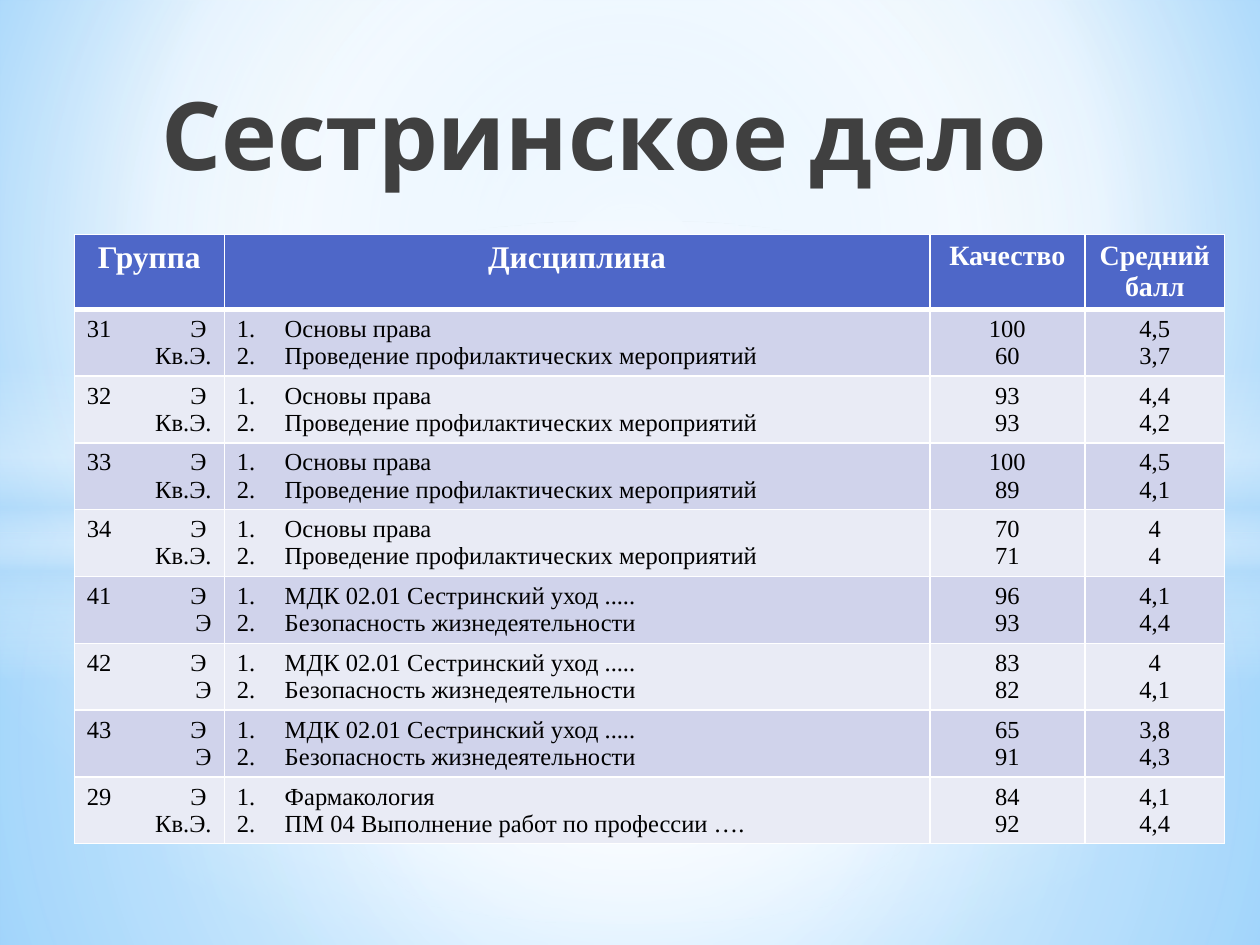
"""Builds the slide with exam results of the nursing groups."""
from lxml import etree
from pptx import Presentation
from pptx.dml.color import RGBColor
from pptx.enum.shapes import MSO_SHAPE
from pptx.enum.text import MSO_ANCHOR, PP_ALIGN
from pptx.oxml import parse_xml
from pptx.oxml.ns import nsdecls, qn
from pptx.util import Inches, Pt

LEFT, CENTER, RIGHT = PP_ALIGN.LEFT, PP_ALIGN.CENTER, PP_ALIGN.RIGHT
TOP = MSO_ANCHOR.TOP
RECTANGLE, OVAL = MSO_SHAPE.RECTANGLE, MSO_SHAPE.OVAL

COLORS = {
    "white": "FFFFFF", "sky": "9ED5FF", "azure": "5BB9FF", "haze": "B4DCFA",
    "title": "404040", "text": "000000", "header": "4E67C8",
    "odd": "D0D3EB", "even": "E9EBF5",
}
TITLE = "Сестринское дело"
TITLE_FONT, TABLE_FONT = "Cabin", "Times New Roman"
HEADERS = [(["Группа"], 18), (["Дисциплина"], 18), (["Качество"], 16),
           (["Средний", "балл"], 16)]
PREVENTION = ["Основы права", "Проведение профилактических мероприятий"]
CARE = ["МДК 02.01 Сестринский уход .....", "Безопасность жизнедеятельности"]
PHARMACY = ["Фармакология", "ПМ 04 Выполнение работ по профессии …."]
GROUPS = [
    ("31", "Кв.Э.", PREVENTION, ["100", "60"], ["4,5", "3,7"]),
    ("32", "Кв.Э.", PREVENTION, ["93", "93"], ["4,4", "4,2"]),
    ("33", "Кв.Э.", PREVENTION, ["100", "89"], ["4,5", "4,1"]),
    ("34", "Кв.Э.", PREVENTION, ["70", "71"], ["4", "4"]),
    ("41", "Э", CARE, ["96", "93"], ["4,1", "4,4"]),
    ("42", "Э", CARE, ["83", "82"], ["4", "4,1"]),
    ("43", "Э", CARE, ["65", "91"], ["3,8", "4,3"]),
    ("29", "Кв.Э.", PHARMACY, ["84", "92"], ["4,1", "4,4"]),
]
COLUMN_WIDTHS = [1.19, 5.6, 1.23, 1.11]
HEADER_HEIGHT, ROW_HEIGHT = 0.58, 0.53

MIDDLE = (50, 50, 50, 50)
BACKGROUND = [(0, "sky", 100), (60, "white", 100), (100, "azure", 100)]
GLOWS = [
    (RECTANGLE, (0, 4.23, 10, 3.27), MIDDLE,
     [(0, "white", 91), (37, "white", 76), (100, "haze", 79)]),
    (RECTANGLE, (0, 0, 10, 4.23), MIDDLE,
     [(0, "white", 89), (48, "white", 62), (100, "haze", 79)]),
    (RECTANGLE, (0, 2.9, 10, 2.5), None,
     [(0, "white", 0), (29, "white", 30), (45, "haze", 40),
      (55, "white", 26), (65, "haze", 60), (100, "white", 0)]),
    (OVAL, (0, 1.75, 10, 5.58), MIDDLE,
     [(0, "white", 100), (54, "white", 0)]),
]


def color(name):
    return RGBColor.from_string(COLORS[name])


def set_gradient(fill, owner, stops, focus):
    fill.gradient()
    stop_xml = "".join(
        f'<a:gs pos="{place * 1000}"><a:srgbClr val="{COLORS[name]}">'
        f'<a:alpha val="{opacity * 1000}"/></a:srgbClr></a:gs>'
        for place, name, opacity in stops)
    if focus:
        sides = " ".join(f'{side}="{value * 1000}"' for side, value in zip("ltrb", focus))
        shade = f'<a:path path="circle"><a:fillToRect {sides}/></a:path>'
    else:
        shade = '<a:lin ang="5400000" scaled="0"/>'
    old = owner.find(".//" + qn("a:gradFill"))
    old.getparent().replace(old, parse_xml(
        f'<a:gradFill {nsdecls("a")} rotWithShape="1">'
        f'<a:gsLst>{stop_xml}</a:gsLst>{shade}</a:gradFill>'))


def add_text(para, text, font, size, name, bold=False):
    span = para.add_run()
    span.text = text
    span.font.name, span.font.size, span.font.bold = font, Pt(size), bold
    span.font.color.rgb = color(name)


def style_cell(cell, fill, bottom=1):
    props = cell._tc.get_or_add_tcPr()
    for side, width in (("L", 1), ("R", 1), ("T", 1), ("B", bottom)):
        props.append(parse_xml(
            f'<a:ln{side} {nsdecls("a")} w="{Pt(width)}"><a:solidFill>'
            f'<a:srgbClr val="{COLORS["white"]}"/></a:solidFill></a:ln{side}>'))
    cell.fill.solid()
    cell.fill.fore_color.rgb = color(fill)


def fill_cell(cell, lines, aligns, size=14, name="text", bold=False):
    for index, (line, align) in enumerate(zip(lines, aligns)):
        frame = cell.text_frame
        para = frame.add_paragraph() if index else frame.paragraphs[0]
        para.alignment = align
        add_text(para, line, TABLE_FONT, size, name, bold)


def number_lines(cell):
    for para in cell.text_frame.paragraphs:
        props = para._p.get_or_add_pPr()
        props.set("marL", str(Inches(0.38)))
        props.set("indent", str(Inches(-0.38)))
        etree.SubElement(props, qn("a:buFont"), typeface="+mj-lt")
        etree.SubElement(props, qn("a:buAutoNum"), type="arabicPeriod")


def add_right_tab(para, place):
    tabs = etree.SubElement(para._p.get_or_add_pPr(), qn("a:tabLst"))
    etree.SubElement(tabs, qn("a:tab"), pos=str(Inches(place)), algn="r")


def add_results(slide):
    height = HEADER_HEIGHT + ROW_HEIGHT * len(GROUPS)
    table = slide.shapes.add_table(
        len(GROUPS) + 1, len(HEADERS), Inches(0.59), Inches(1.86),
        Inches(sum(COLUMN_WIDTHS)), Inches(height)).table
    for column, width in zip(table.columns, COLUMN_WIDTHS):
        column.width = Inches(width)
    for index, row in enumerate(table.rows):
        row.height = Inches(ROW_HEIGHT if index else HEADER_HEIGHT)
    for cell, (lines, size) in zip(table.rows[0].cells, HEADERS):
        style_cell(cell, "header", 3)
        fill_cell(cell, lines, [CENTER] * 2, size, "white", True)
    for index, (group, exam, subjects, quality, average) in enumerate(GROUPS, 1):
        cells = list(table.rows[index].cells)
        for cell in cells:
            style_cell(cell, "odd" if index % 2 else "even")
        fill_cell(cells[0], [f"{group}\tЭ", exam], [LEFT, RIGHT])
        add_right_tab(cells[0].text_frame.paragraphs[0], 0.95)
        fill_cell(cells[1], subjects, [LEFT] * 2)
        number_lines(cells[1])
        fill_cell(cells[2], quality, [CENTER] * 2)
        fill_cell(cells[3], average, [CENTER] * 2)


def main():
    deck = Presentation()
    deck.slide_width, deck.slide_height = Inches(10), Inches(7.5)
    slide = deck.slides.add_slide(deck.slide_layouts[5])
    set_gradient(slide.background.fill, slide._element, BACKGROUND, (20, 10, 20, 60))
    for kind, place, focus, stops in GLOWS:
        glow = slide.shapes.add_shape(kind, *map(Inches, place))
        glow.shadow.inherit = False
        glow.line.fill.background()
        set_gradient(glow.fill, glow._element, stops, focus)

    title = slide.shapes.title
    title.left, title.top, title.width, title.height = map(Inches, (0.98, 0.6, 7.85, 1.34))
    slide.shapes._spTree.append(title._element)
    frame = title.text_frame
    frame.word_wrap, frame.vertical_anchor = True, TOP
    frame.margin_left, frame.margin_top = Inches(0.3), 0
    para = frame.paragraphs[0]
    para.alignment = LEFT
    add_text(para, TITLE, TITLE_FONT, 54, "title", True)

    add_results(slide)
    deck.save("out.pptx")


if __name__ == "__main__":
    main()
